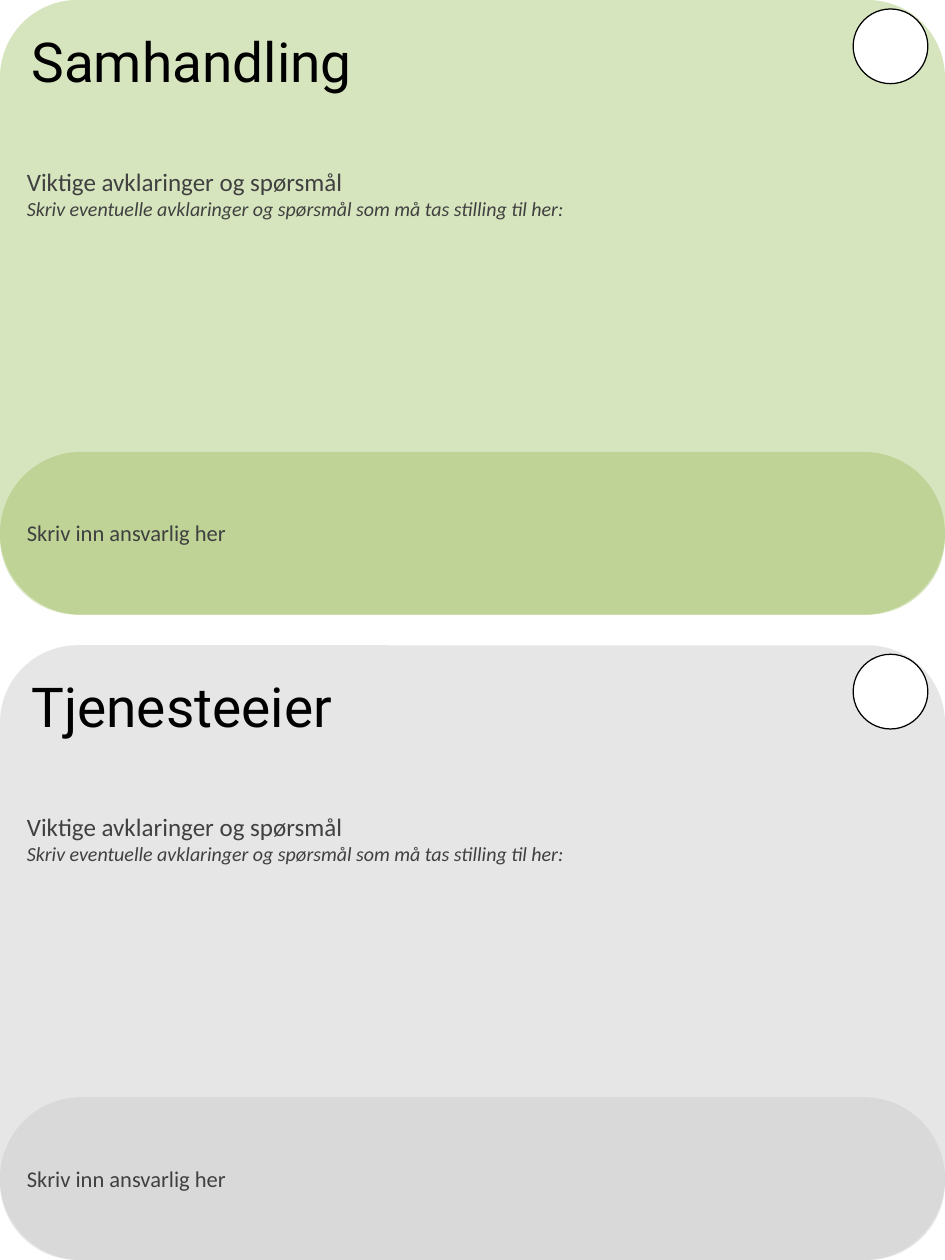
from dataclasses import dataclass

import pptx
import pptx.dml.color
import pptx.enum.shapes
import pptx.enum.text
import pptx.util

SHAPE = pptx.enum.shapes.MSO_SHAPE
ANCHOR = pptx.enum.text.MSO_ANCHOR
ALIGN = pptx.enum.text.PP_ALIGN
COLORS = {
    "green": "D7E5BE", "dark_green": "BED395",
    "grey": "E7E6E6", "dark_grey": "D9D9D9",
    "white": "FFFFFF", "black": "000000", "text": "404040",
}

# Slide, card and footer sizes in inches
WIDTH, HEIGHT = 10.5, 14
CARD_H, FOOTER_H = 6.83, 1.81
MARGIN, DOT = 0.2, 0.83


@dataclass
class Card:
    title: str
    fill: str
    footer: str


CARDS = [
    Card("Samhandling", "green", "dark_green"),
    Card("Tjenesteeier", "grey", "dark_grey"),
]


def rgb(name: str) -> pptx.dml.color.RGBColor:
    return pptx.dml.color.RGBColor.from_string(COLORS[name])


def add_shape(s, kind, x: float, y: float, w: float, h: float, fill: str,
              line: str | None = None, adj: float | None = None):
    sp = s.shapes.add_shape(kind, *map(pptx.util.Inches, (x, y, w, h)))
    sp.shadow.inherit = False
    sp.fill.solid()
    sp.fill.fore_color.rgb = rgb(fill)
    if line:
        sp.line.color.rgb = rgb(line)
        sp.line.width = pptx.util.Pt(1)
    else:
        sp.line.fill.background()
    if adj is not None:
        sp.adjustments[0] = adj
    return sp


def add_box(s, x: float, y: float, w: float, h: float):
    sp = s.shapes.add_textbox(*map(pptx.util.Inches, (x, y, w, h)))
    sp.text_frame.word_wrap = True
    sp.text_frame.auto_size = pptx.enum.text.MSO_AUTO_SIZE.SHAPE_TO_FIT_TEXT
    return sp


def write(p, text: str, *, size: float, font: str = "Calibri",
          color: str = "text", italic: bool = False) -> None:
    p.alignment = ALIGN.LEFT
    r = p.add_run()
    r.text = text
    r.font.name = font
    r.font.size = pptx.util.Pt(size)
    r.font.italic = italic
    r.font.color.rgb = rgb(color)


def add_card(s, card: Card, top: float) -> None:
    # Panel with its heading
    sp = add_shape(s, SHAPE.ROUNDED_RECTANGLE, 0, top, WIDTH, CARD_H,
                   card.fill, adj=0.126)
    tf = sp.text_frame
    tf.vertical_anchor = ANCHOR.TOP
    write(tf.paragraphs[0], card.title, size=44, font="Roboto", color="black")

    # Footer band
    add_shape(s, SHAPE.ROUNDED_RECTANGLE, 0, top + CARD_H - FOOTER_H,
              WIDTH, FOOTER_H, card.footer, adj=0.5)

    # Questions and person responsible
    tf = add_box(s, MARGIN, top + 1.8, WIDTH - MARGIN, 0.71).text_frame
    write(tf.paragraphs[0], "Viktige avklaringer og spørsmål", size=20)
    write(tf.add_paragraph(),
          "Skriv eventuelle avklaringer og spørsmål som må tas stilling til her:",
          size=16, italic=True)
    tf = add_box(s, MARGIN, top + 5.72, WIDTH / 2, 0.4).text_frame
    write(tf.paragraphs[0], "Skriv inn ansvarlig her", size=18)

    # Number circle
    add_shape(s, SHAPE.OVAL, WIDTH - DOT - 0.19, top + 0.1, DOT, DOT,
              "white", line="black")


def main() -> None:
    prs = pptx.Presentation()
    prs.slide_width = pptx.util.Inches(WIDTH)
    prs.slide_height = pptx.util.Inches(HEIGHT)
    s = prs.slides.add_slide(prs.slide_layouts[6])
    for i, card in enumerate(CARDS):
        add_card(s, card, i * (HEIGHT - CARD_H))
    prs.save("out.pptx")


if __name__ == "__main__":
    main()
